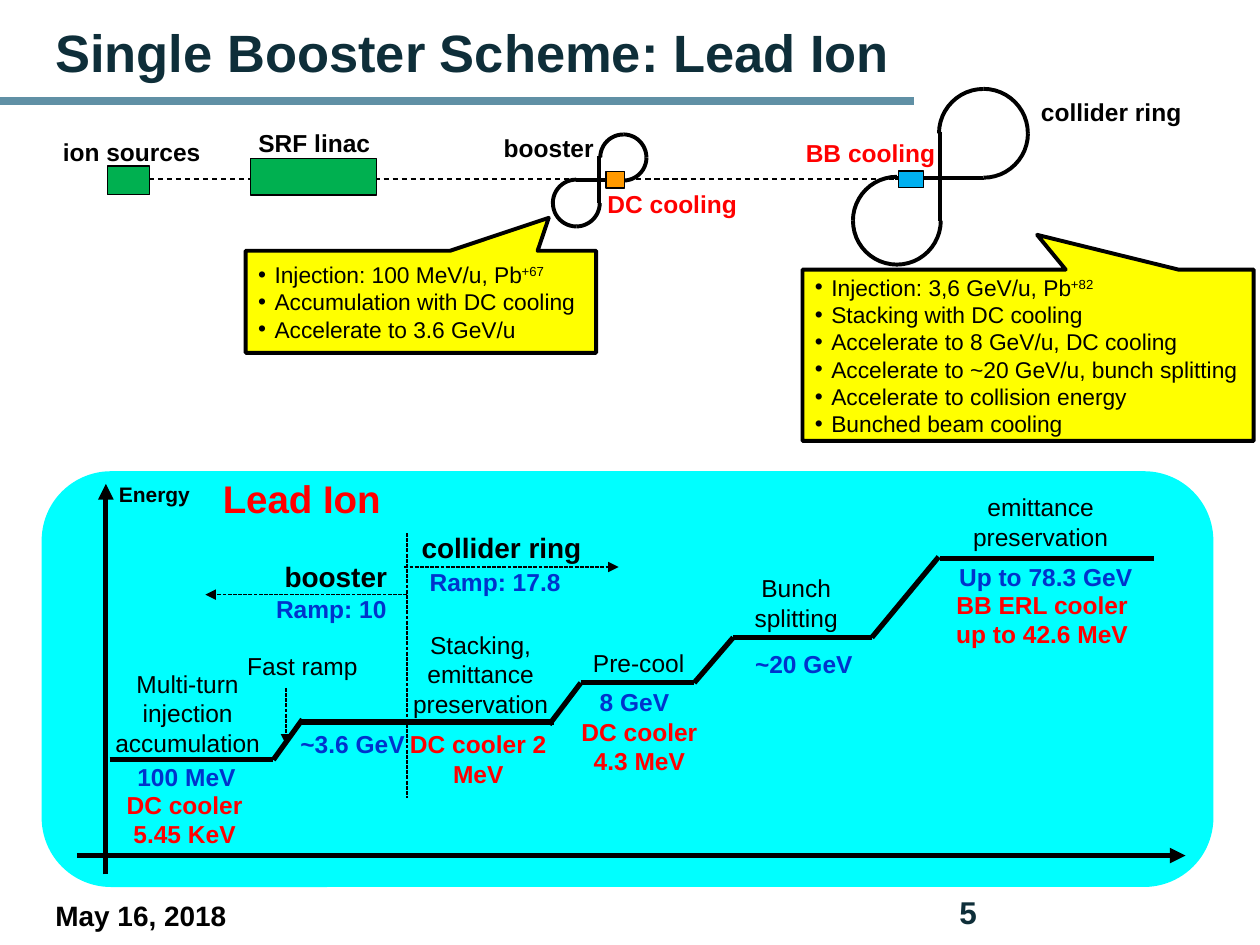
"""Build the slide on the single booster scheme for lead ions."""
from lxml import etree
from pptx import Presentation, util as u
from pptx.dml.color import RGBColor
from pptx.enum import dml, shapes, text
from pptx.oxml.ns import qn

Pt = u.Pt
SH = shapes.MSO_SHAPE
AL = text.PP_ALIGN
DASH = dml.MSO_LINE
C = {"black": "000000", "navy": "0E2E39", "teal": "6090A5", "red": "FF0000",
     "blue": "0033CC", "green": "00B050", "orange": "FF9900", "sky": "00B0F0",
     "yellow": "FFFF00", "cyan": "00FFFF", "white": "FFFFFF"}
COLOR = {name: RGBColor.from_string(value) for name, value in C.items()}

prs = Presentation()
prs.slide_width, prs.slide_height = Pt(720), Pt(540)
slide = prs.slides.add_slide(prs.slide_layouts[6])
slide.background.fill.solid()
slide.background.fill.fore_color.rgb = COLOR["white"]


def add_line(x1, y1, x2, y2, width, color="black", dash=None, arrow=False):
    s = slide.shapes.add_connector(shapes.MSO_CONNECTOR.STRAIGHT, Pt(x1), Pt(y1), Pt(x2), Pt(y2))
    s.line.color.rgb = COLOR[color]
    s.line.width = Pt(width)
    if dash:
        s.line.dash_style = dash
    if arrow:
        etree.SubElement(s.line._get_or_add_ln(), qn("a:tailEnd"), type="triangle")
    etree.SubElement(s._element.spPr, qn("a:effectLst"))


def add_text(box, lines, size=14, color="black", bold=True, align=AL.CENTER,
             anchor=text.MSO_ANCHOR.TOP, spacing=None):
    tf = slide.shapes.add_textbox(*map(Pt, box)).text_frame
    tf.word_wrap = True
    tf.margin_left = tf.margin_right = 0
    tf.vertical_anchor = anchor
    for i, line in enumerate(lines):
        p = tf.paragraphs[0] if i == 0 else tf.add_paragraph()
        p.alignment = align
        p.line_spacing = spacing
        r = p.add_run()
        r.text = line
        r.font.name, r.font.size, r.font.bold = "Arial", Pt(size), bold
        r.font.color.rgb = COLOR[color]


add_line(-0.7, 57.6, 522, 57.6, 4.5, "teal")
add_text((31.7, 509.8, 420, 26.6), ["May 16, 2018"], 16, align=AL.LEFT)
add_text((31.7, 11.5, 652, 40.3), ["Single Booster Scheme: Lead Ion"], 30, "navy",
         align=AL.LEFT, anchor=text.MSO_ANCHOR.MIDDLE, spacing=0.9)
add_text((532, 509, 42.5, 23.8), ["5"], 18, "navy", anchor=text.MSO_ANCHOR.MIDDLE)

add_line(79.9, 102.3, 562.3, 102.3, 0.75, dash=DASH.DASH)

rings = [
    ((343, 76.8, 26.4), (315.9, 102.6, 26.8)),
    ((536.6, 50.8, 50.8), (487.4, 101, 50.2)),
]
for upper, lower in rings:
    for (x, y, size), turns in ((upper, (0, 270, 90)), (lower, (180, 90, 270))):
        for turn in turns:
            s = slide.shapes.add_shape(SH.ARC, Pt(x), Pt(y), Pt(size), Pt(size))
            s.shadow.inherit = False
            s.fill.background()
            s.line.color.rgb = COLOR["black"]
            s.line.width = Pt(2.25)
            s.rotation = turn
for x1, y1, x2, y2 in ((342.2, 89.3, 342.2, 115.9), (355.7, 102.8, 329, 102.8),
                       (537.1, 75.6, 537.1, 126), (561.6, 101.6, 511.2, 101.6)):
    add_line(x1, y1, x2, y2, 2.25)

for box, color in (((61.4, 94.9, 24, 16.4), "green"), ((143, 90.8, 72, 20.7), "green"),
                   ((346.3, 98.1, 10.6, 9.4), "orange"), ((513.5, 97.8, 14.4, 9.4), "sky")):
    s = slide.shapes.add_shape(SH.RECTANGLE, *map(Pt, box))
    s.shadow.inherit = False
    s.fill.solid()
    s.fill.fore_color.rgb = COLOR[color]
    s.line.color.rgb = COLOR["black"]
    s.line.width = Pt(0.75)

for box, label, color in (
    ((28.1, 74.9, 94.3, 24.5), "ion sources", "black"),
    ((136.1, 69.8, 87.1, 24.5), "SRF linac", "black"),
    ((273.6, 72.7, 79.9, 24.5), "booster", "black"),
    ((580.3, 51.8, 109.4, 24.5), "collider ring", "black"),
    ((440.6, 75.6, 113.8, 24.5), "BB cooling", "red"),
    ((328.3, 104.4, 111.6, 24.5), "DC cooling", "red"),
):
    add_text(box, [label], color=color)

callouts = [
    ((140.4, 143.3, 200.2, 58.3), (0.365, -0.823), "+67",
     ["Injection: 100 MeV/u, Pb", "Accumulation with DC cooling", "Accelerate to 3.6 GeV/u"]),
    ((458.6, 154.1, 257.8, 97.9), (0.02, -0.703), "+82",
     ["Injection: 3,6 GeV/u, Pb", "Stacking with DC cooling", "Accelerate to 8 GeV/u, DC cooling",
      "Accelerate to ~20 GeV/u, bunch splitting", "Accelerate to collision energy",
      "Bunched beam cooling"]),
]
for box, pointer, charge, steps in callouts:
    s = slide.shapes.add_shape(SH.RECTANGULAR_CALLOUT, *map(Pt, box))
    s.shadow.inherit = False
    s.adjustments[0], s.adjustments[1] = pointer
    s.fill.solid()
    s.fill.fore_color.rgb = COLOR["yellow"]
    s.line.color.rgb = COLOR["black"]
    s.line.width = Pt(2.25)
    tf = s.text_frame
    tf.word_wrap = True
    tf.vertical_anchor = text.MSO_ANCHOR.MIDDLE
    for i, step in enumerate(steps):
        p = tf.paragraphs[0] if i == 0 else tf.add_paragraph()
        p.alignment = AL.LEFT
        pPr = p._p.get_or_add_pPr()
        pPr.set("marL", str(Pt(9.4)))
        pPr.set("indent", str(Pt(-9.4)))
        etree.SubElement(pPr, qn("a:buFont"), typeface="Arial")
        etree.SubElement(pPr, qn("a:buChar"), char="•")
        for part in [step, charge] if i == 0 else [step]:
            r = p.add_run()
            r.text = part
            r.font.name, r.font.size = "Arial", Pt(13)
            r.font.color.rgb = COLOR["black"]
            if part == charge:
                r.font._element.set("baseline", "30000")

s = slide.shapes.add_shape(SH.ROUNDED_RECTANGLE, Pt(23.8), Pt(269.3), Pt(669.6), Pt(237.6))
s.shadow.inherit = False
s.fill.solid()
s.fill.fore_color.rgb = COLOR["cyan"]
s.line.fill.background()

for axis in ((60.5, 499.7, 60.5, 276.5), (43.9, 488.9, 677.5, 488.9)):
    add_line(*axis, 3, arrow=True)

for step in (
    (62.6, 434.2, 156.2, 434.2), (156.2, 434.2, 172.8, 411.1), (172.8, 412.6, 316.8, 412.6),
    (313.9, 414, 331.9, 390.2), (331.9, 390.2, 396.7, 390.2), (396.7, 390.2, 419, 364.3),
    (419, 364.3, 498.2, 364.3), (498.2, 364.3, 536.4, 318.2), (537.1, 319, 659.5, 319),
):
    add_line(*step, 3)

add_line(232.6, 304.6, 232.6, 455.8, 0.75, dash=DASH.SQUARE_DOT)
for span in ((231.1, 324, 353.5, 324), (232.6, 339.8, 117.4, 339.8), (163.4, 393.1, 163.4, 425.5)):
    add_line(*span, 0.75, dash=DASH.SQUARE_DOT, arrow=True)

for box, label, size, color in (
    ((225.4, 299.5, 122.4, 26.6), "collider ring", 16, "black"),
    ((154.1, 316.1, 75.6, 26.6), "booster", 16, "black"),
    ((115.2, 267.8, 114.5, 33.8), "Lead Ion", 22, "red"),
    ((56.2, 271.4, 64.1, 21.6), "Energy", 12, "black"),
):
    add_text(box, [label], size, color)

for box, lines in (
    ((58.3, 378.7, 97.9, 58.3), ["Multi-turn injection accumulation"]),
    ((325.4, 366.5, 79.2, 24.5), ["Pre-cool"]),
    ((419, 324, 72, 41), ["Bunch splitting"]),
    ((223.9, 356.4, 101.5, 58.3), ["Stacking,", "emittance preservation"]),
    ((133.9, 368.6, 77.8, 24.5), ["Fast ramp"]),
    ((533.5, 277.9, 122.4, 41), ["emittance preservation"]),
):
    add_text(box, lines, bold=False)

for box, label in (
    ((67, 432, 79.2, 24.5), "100 MeV"),
    ((163.4, 413.3, 76.3, 24.5), "~3.6 GeV"),
    ((333.4, 388.8, 58.3, 24.5), "8 GeV"),
    ((421.9, 367.2, 74.9, 24.5), "~20 GeV"),
    ((539.3, 317.5, 116.6, 24.5), "Up to 78.3 GeV"),
    ((234.7, 320.4, 96.5, 24.5), "Ramp: 17.8"),
    ((141.1, 336.2, 96.5, 24.5), "Ramp: 10"),
):
    add_text(box, [label], color="blue")

for box, lines in (
    ((64.8, 447.8, 81.4, 41), ["DC cooler", "5.45 KeV"]),
    ((232.6, 413.3, 81.4, 41), ["DC cooler 2 MeV"]),
    ((324.7, 406.1, 81.4, 41), ["DC cooler 4.3 MeV"]),
    ((538.6, 333.4, 113.8, 41), ["BB ERL cooler", "up to 42.6 MeV"]),
):
    add_text(box, lines, color="red")

prs.save("out.pptx")
